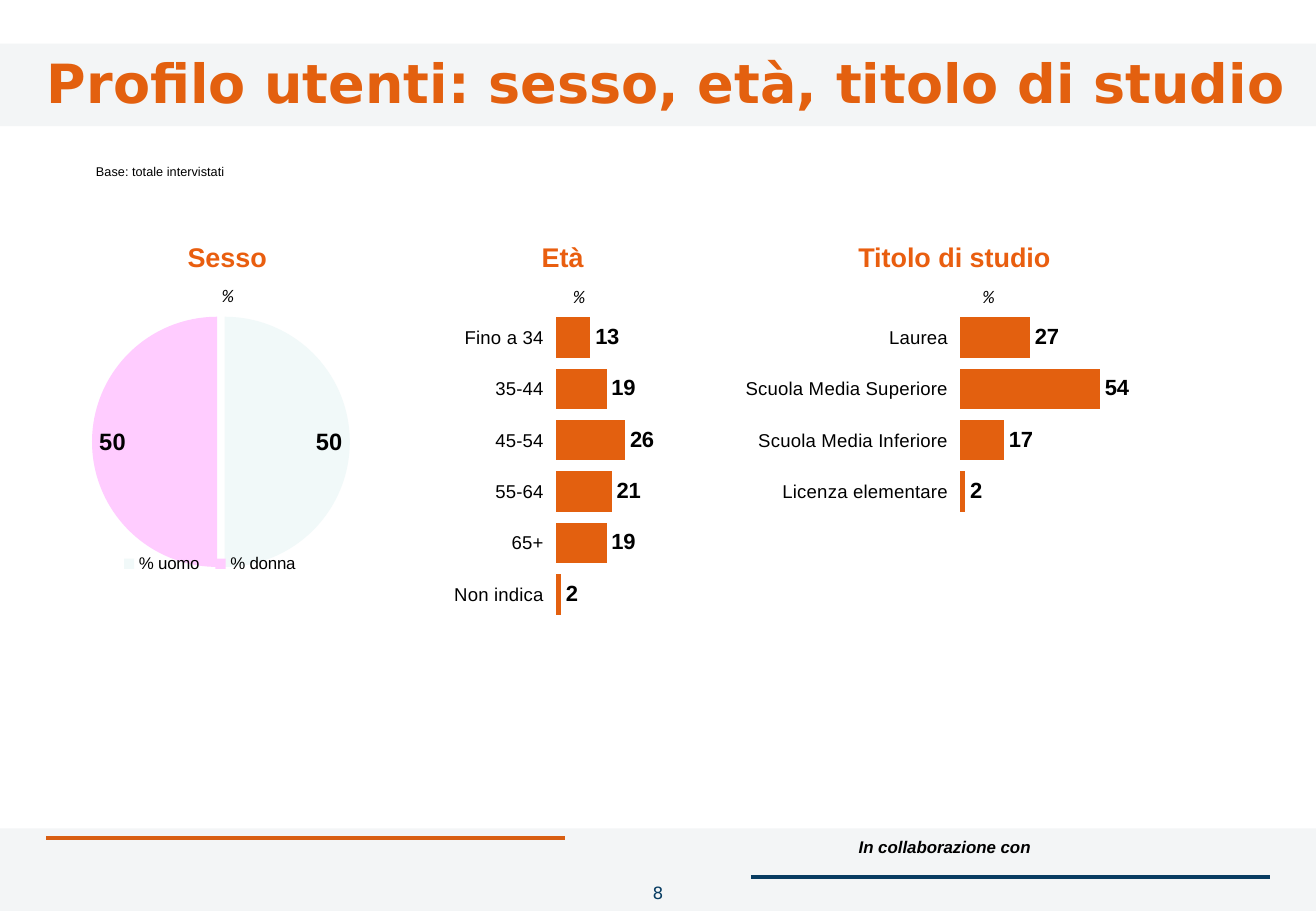
from lxml import etree
from pptx import Presentation
from pptx import util as u
from pptx.chart.data import CategoryChartData
from pptx.dml.color import RGBColor
from pptx.enum import chart as ch, shapes, text
from pptx.oxml import parse_xml
from pptx.oxml.ns import nsdecls, qn

PX = 9144  # EMU per px, 100 px to the inch
WIDE, HIGH = 1083, 750
ORANGE, HEAD, NAVY, SLATE, BLACK = "E3600F", "E95E0F", "073C62", "1E3D5C", "000000"
MINT, PINK = "F1F9F9", "FFCCFF"
CENTER, RIGHT = text.PP_ALIGN.CENTER, text.PP_ALIGN.RIGHT
AGES = {"Fino a 34": 13, "35-44": 19, "45-54": 26, "55-64": 21, "65+": 19, "Non indica": 2}
# Two blank rows keep the bars level with those of the ages
STUDY = [("Laurea", 27), ("Scuola Media Superiore", 54), ("Scuola Media Inferiore", 17),
         ("Licenza elementare", 2), ("", None), ("", None)]


def px(*nums):
    return [u.Emu(round(n * PX)) for n in nums]


def rgb(code):
    return RGBColor.from_string(code)


def style(font, size, color=BLACK, name="Arial", bold=False, italic=False):
    font.size, font.name = u.Pt(size), name
    font.bold, font.italic = bold, italic
    font.color.rgb = rgb(color)


def label(slide, box, words, size, align=CENTER, pad=(8, 4), mid=False, **look):
    frame = slide.shapes.add_textbox(*px(*box)).text_frame
    frame.word_wrap = True
    frame.margin_left = frame.margin_right = px(pad[0])[0]
    frame.margin_top = frame.margin_bottom = px(pad[1])[0]
    if mid:
        frame.vertical_anchor = text.MSO_ANCHOR.MIDDLE
    para = frame.paragraphs[0]
    para.alignment = align
    run = para.add_run()
    run.text = words
    style(run.font, size, **look)
    return para


def band(slide, top):
    rect = slide.shapes.add_shape(shapes.MSO_SHAPE.RECTANGLE, *px(0, top, WIDE, 68))
    rect.shadow.inherit = False
    rect.line.fill.background()
    rect.fill.solid()
    rect.fill.fore_color.rgb = rgb(SLATE)
    tint = rect.fill._xPr.find(".//" + qn("a:srgbClr"))
    etree.SubElement(tint, qn("a:alpha"), val="5000")


def rule(slide, left, top, color):
    line = slide.shapes.add_connector(shapes.MSO_CONNECTOR.STRAIGHT,
                                      *px(left, top, left + 427, top))
    line.line.color.rgb = rgb(color)
    line.line.width = u.Pt(2)
    etree.SubElement(line._element.spPr, qn("a:effectLst"))


def place(part, left, top, width, height, inner=False):
    """Give a plot area or legend a fixed spot, in shares of the chart."""
    old = part.find(qn("c:layout"))
    if old is not None:
        part.remove(old)
    spot = {"xMode": "edge", "yMode": "edge", "x": left, "y": top, "w": width, "h": height}
    if inner:
        spot = {"layoutTarget": "inner", **spot}
    tags = "".join(f'<c:{key} val="{val}"/>' for key, val in spot.items())
    node = parse_xml(f'<c:layout {nsdecls("c")}><c:manualLayout>{tags}'
                     '</c:manualLayout></c:layout>')
    part.insert(1 if part.tag == qn("c:legend") else 0, node)


def graph(slide, box, kind, rows, spot, size):
    data = CategoryChartData(number_format="#,##0")
    data.categories = [name for name, _ in rows]
    data.add_series("Series 1", [val for _, val in rows])
    chart = slide.shapes.add_chart(kind, *px(*box), data).chart
    chart.has_title = chart.has_legend = False
    style(chart.font, 18, name="DejaVu Sans")
    root = chart._chartSpace
    root.find(qn("c:chart")).addnext(parse_xml(
        f'<c:spPr {nsdecls("c", "a")}><a:noFill/><a:ln><a:noFill/></a:ln></c:spPr>'))
    place(root.find(".//" + qn("c:plotArea")), *spot, inner=True)
    plot = chart.plots[0]
    plot.has_data_labels = True
    marks = plot.data_labels
    marks.show_value = True
    marks.number_format, marks.number_format_is_linked = "#,##0", False
    style(marks.font, size, bold=True)
    return chart, plot


def bars(slide, box, rows):
    chart, plot = graph(slide, box, ch.XL_CHART_TYPE.BAR_CLUSTERED, rows,
                        (0.448, 0.106, 0.475, 0.849), 13)
    plot.gap_width, plot.vary_by_categories = 27, False
    plot.data_labels.position = ch.XL_LABEL_POSITION.OUTSIDE_END
    fill = plot.series[0].format.fill
    fill.solid()
    fill.fore_color.rgb = rgb(ORANGE)
    cats, vals = chart.category_axis, chart.value_axis
    cats.reverse_order = True
    cats.format.line.fill.background()
    style(cats.tick_labels.font, 11)
    vals.minimum_scale, vals.maximum_scale = 0, 100
    vals.has_major_gridlines = vals.visible = False


def pie(slide, box, rows):
    chart, plot = graph(slide, box, ch.XL_CHART_TYPE.PIE, rows, (0.1, 0.13, 0.56, 0.75), 14)
    plot.data_labels.position = ch.XL_LABEL_POSITION.INSIDE_END
    for i, color in enumerate((MINT, PINK)):
        point = plot.series[0].points[i]
        point.format.fill.solid()
        point.format.fill.fore_color.rgb = rgb(color)
        point.format.line.fill.background()
        slice_tag = point.format.fill._xPr.getparent()
        slice_tag.find(qn("c:spPr")).addprevious(
            parse_xml(f'<c:explosion {nsdecls("c")} val="3"/>'))
    chart.has_legend = True
    key = chart.legend
    key.position, key.include_in_layout = ch.XL_LEGEND_POSITION.BOTTOM, False
    style(key.font, 10)
    place(key._element, 0.14, 0.83, 0.43, 0.08)


def panel(slide, box, draw, rows, title, head, unit):
    """A chart with its heading (left, width) and unit (left, top) set from its box."""
    left, top = box[:2]
    draw(slide, box, rows)
    label(slide, (left + head[0], top - 31, head[1], 34), title, 16, color=HEAD, bold=True)
    label(slide, (left + unit[0], top + unit[1], 39, 17), "%", 10,
          pad=(0, 0), mid=True, name="Lato", italic=True)


def header(slide, top):
    band(slide, top)
    label(slide, (14, top - 31, 1069, 125), "Profilo utenti: sesso, età, titolo di studio", 32,
          pad=(10, 5), mid=True, color=ORANGE, name="DejaVu Sans", bold=True)
    base = label(slide, (71, top + 89, 242, 20), "Base: totale intervistati", 7.5,
                 align=text.PP_ALIGN.JUSTIFY)
    base.line_spacing = 1.5


def footer(slide, top):
    rule(slide, 38, top + 8, ORANGE)
    rule(slide, 618, top + 40, NAVY)
    band(slide, top)
    label(slide, (655, top + 3, 201, 26), "In collaborazione con", 10,
          align=RIGHT, bold=True, italic=True)
    label(slide, (494, top + 40, 95, 39), "8", 10, pad=(10, 5), color=NAVY, name="DejaVu Sans")


def main():
    deck = Presentation()
    deck.slide_width, deck.slide_height = px(WIDE, HIGH)
    slide = deck.slides.add_slide(deck.slide_layouts[6])
    footer(slide, 682)
    header(slide, 36)
    # Age, sex and education
    panel(slide, (250, 225, 463, 299), bars, list(AGES.items()), "Età", (142, 142), (207, 11))
    panel(slide, (42, 225, 368, 275), pie, [("% uomo", 50), ("% donna", 50)],
          "Sesso", (74, 142), (126, 10))
    panel(slide, (589, 225, 449, 299), bars, STUDY, "Titolo di studio", (94, 205), (205, 11))
    deck.save("out.pptx")


if __name__ == "__main__":
    main()
